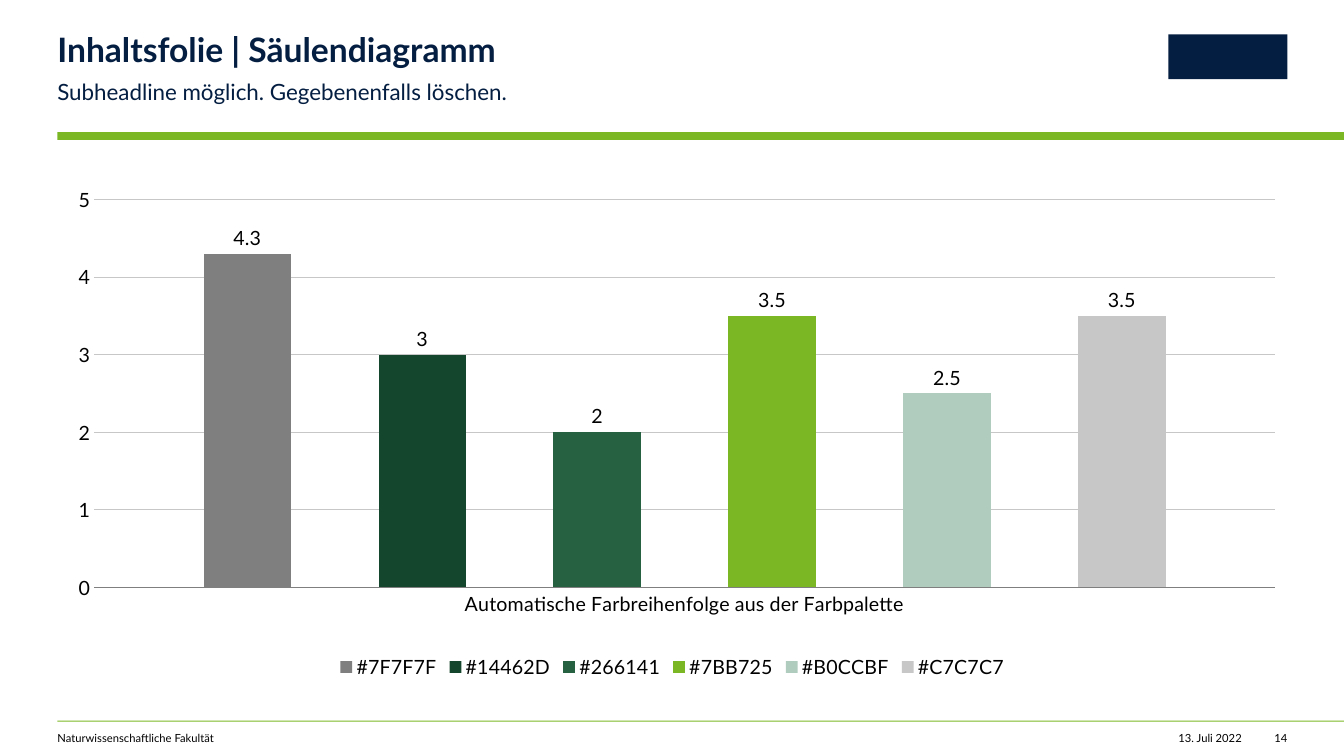
from dataclasses import dataclass

from pptx import Presentation
from pptx.chart.data import CategoryChartData
from pptx.dml.color import RGBColor
from pptx.enum.chart import XL_CHART_TYPE, XL_LABEL_POSITION, XL_LEGEND_POSITION, XL_TICK_MARK
from pptx.enum.shapes import MSO_SHAPE
from pptx.enum.text import PP_ALIGN
from pptx.oxml import parse_xml
from pptx.oxml.ns import nsdecls
from pptx.util import Pt

COLUMNS = XL_CHART_TYPE.COLUMN_CLUSTERED
OUTSIDE_END = XL_LABEL_POSITION.OUTSIDE_END
BOTTOM = XL_LEGEND_POSITION.BOTTOM
NO_TICK = XL_TICK_MARK.NONE
RECT = MSO_SHAPE.RECTANGLE
LEFT, RIGHT = PP_ALIGN.LEFT, PP_ALIGN.RIGHT


@dataclass(frozen=True)
class Theme:
    """Fonts, type sizes and colours of the slide."""
    font: str = "Lato"
    title: int = 24
    subtitle: int = 16
    chart: int = 14
    footer: int = 8
    navy: str = "041E42"
    green: str = "7BB725"
    black: str = "000000"
    axis: str = "7F7F7F"
    grid: str = "C7C7C7"


THEME = Theme()
MARGIN = 41
SLIDE_W, SLIDE_H = 960, 540
CATEGORY = "Automatische Farbreihenfolge aus der Farbpalette"
COLUMN_VALUES = {"7F7F7F": 4.3, "14462D": 3, "266141": 2,
                 "7BB725": 3.5, "B0CCBF": 2.5, "C7C7C7": 3.5}
PLOT_AREA = {"x": 0.03, "y": 0.04, "w": 0.96, "h": 0.77}


def rgb(color):
    """Turn a hex string into a colour."""
    return RGBColor.from_string(color)


def set_font(font, size, color, bold=False):
    """Apply the theme font with a size and a colour."""
    font.name, font.size, font.bold = THEME.font, Pt(size), bold
    font.color.rgb = rgb(color)


def add_block(s, x, y, w, h, color):
    """Add a plain filled rectangle."""
    sp = s.shapes.add_shape(RECT, Pt(x), Pt(y), Pt(w), Pt(h))
    sp.shadow.inherit = False
    sp.fill.solid()
    sp.fill.fore_color.rgb = rgb(color)
    sp.line.fill.background()


def add_text(s, text, x, y, w, h, size, color=THEME.black, bold=False,
             align=LEFT, spacing=1.0):
    """Add one line of text in a box without insets."""
    tf = s.shapes.add_textbox(Pt(x), Pt(y), Pt(w), Pt(h)).text_frame
    tf.word_wrap = True
    tf.margin_left = tf.margin_right = tf.margin_top = tf.margin_bottom = 0
    p = tf.paragraphs[0]
    p.text, p.alignment, p.line_spacing = text, align, spacing
    set_font(p.font, size, color, bold)


def set_line(line, color):
    """Draw a thin chart line."""
    line.color.rgb = rgb(color)
    line.width = Pt(0.5)


def set_plot_area(chart, area):
    """Fix the inner plot area as fractions of the chart."""
    modes = "".join(f'<c:{k}Mode val="edge"/>' for k in "xy")
    sizes = "".join(f'<c:{k} val="{v}"/>' for k, v in area.items())
    plot_area = chart._chartSpace.chart.plotArea
    for layout in plot_area.xpath("c:layout"):
        plot_area.remove(layout)
    plot_area.insert(0, parse_xml(
        f'<c:layout {nsdecls("c")}><c:manualLayout><c:layoutTarget val="inner"/>'
        f'{modes}{sizes}</c:manualLayout></c:layout>'))


def style_axes(chart):
    """Style both axes and the gridlines."""
    cat, val = chart.category_axis, chart.value_axis
    for axis in (cat, val):
        axis.major_tick_mark = axis.minor_tick_mark = NO_TICK
        set_font(axis.tick_labels.font, THEME.chart, THEME.black)
    set_line(cat.format.line, THEME.axis)
    val.format.line.fill.background()
    val.minimum_scale, val.maximum_scale, val.major_unit = 0, 5, 1
    set_line(val.major_gridlines.format.line, THEME.grid)


def add_columns(s, x, y, w, h):
    """Add the column chart with one series per palette colour."""
    data = CategoryChartData()
    data.categories = [CATEGORY]
    for color, value in COLUMN_VALUES.items():
        data.add_series(f"#{color}", [value])
    chart = s.shapes.add_chart(COLUMNS, Pt(x), Pt(y), Pt(w), Pt(h), data).chart
    set_font(chart.font, THEME.chart, THEME.black)
    chart.has_title = False
    chart.has_legend = True
    chart.legend.position = BOTTOM
    chart.legend.include_in_layout = False
    set_font(chart.legend.font, THEME.chart, THEME.black)
    style_axes(chart)

    plot = chart.plots[0]
    plot.gap_width, plot.overlap = 250, -100
    plot.vary_by_categories = False
    plot.has_data_labels = True
    labels = plot.data_labels
    labels.show_value, labels.position = True, OUTSIDE_END
    set_font(labels.font, THEME.chart, THEME.black)
    for series, color in zip(plot.series, COLUMN_VALUES):
        series.format.fill.solid()
        series.format.fill.fore_color.rgb = rgb(color)
    set_plot_area(chart, PLOT_AREA)


def main():
    """Build the slide and save it."""
    prs = Presentation()
    prs.slide_width, prs.slide_height = Pt(SLIDE_W), Pt(SLIDE_H)
    s = prs.slides.add_slide(prs.slide_layouts[6])

    for y, h in ((94.3, 5.7), (514.8, 0.7)):
        add_block(s, MARGIN, y, SLIDE_W - MARGIN, h, THEME.green)
    add_block(s, 834.5, 24.5, 85, 32, THEME.navy)

    add_text(s, "Inhaltsfolie | Säulendiagramm", MARGIN, 23.8, 539, 26,
             THEME.title, THEME.navy, bold=True, spacing=0.9)
    add_text(s, "Subheadline möglich. Gegebenenfalls löschen.", MARGIN, 54, 539, 19.4,
             THEME.subtitle, THEME.navy, spacing=1.1)
    add_columns(s, MARGIN, 128, 878.5, 360)

    add_text(s, "Naturwissenschaftliche Fakultät", MARGIN, 522.7, 430, 9.4, THEME.footer)
    add_text(s, "13. Juli 2022", 833.8, 522.7, 53.3, 9.4, THEME.footer, align=RIGHT)
    add_text(s, "14", 904, 522.7, 15.5, 9.4, THEME.footer, align=RIGHT)
    prs.save("out.pptx")


if __name__ == "__main__":
    main()
